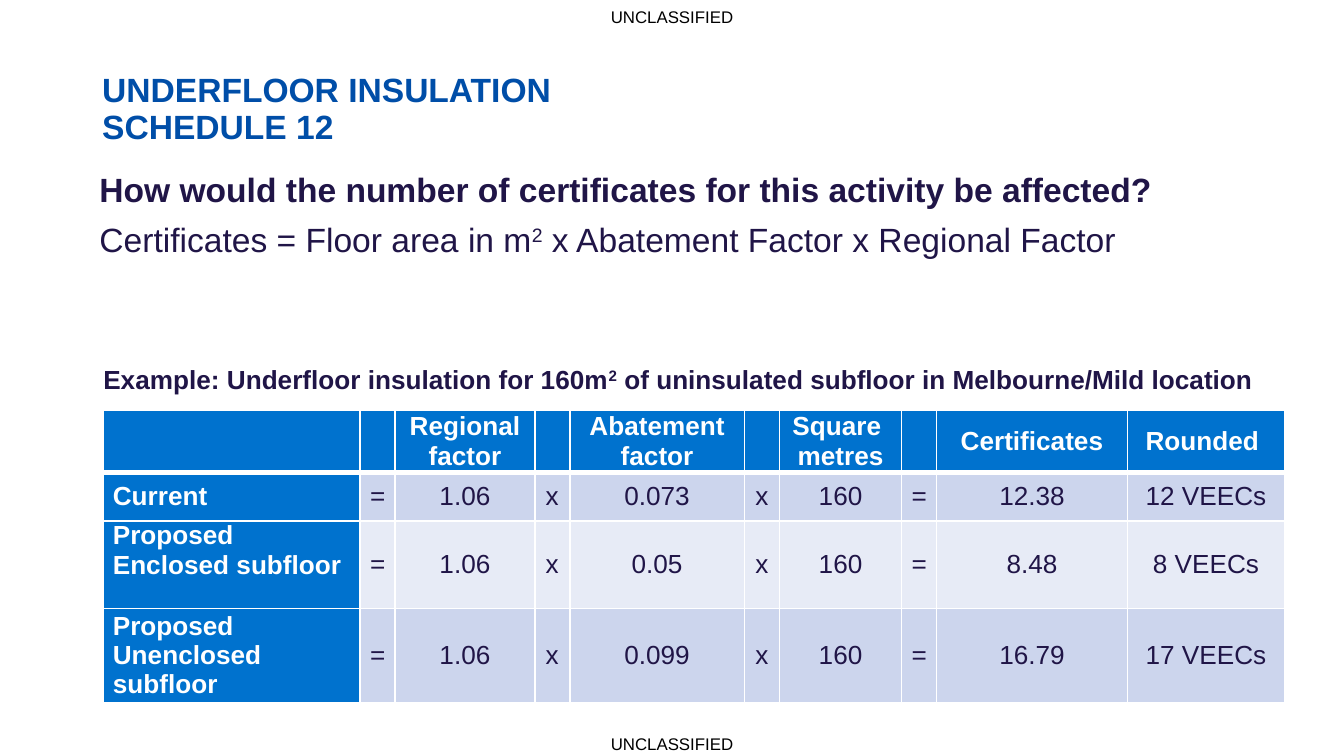
from lxml.etree import SubElement as Sub
from pptx import Presentation
from pptx.dml.color import RGBColor as Rgb
from pptx.enum.text import MSO_ANCHOR as Anchor, MSO_AUTO_SIZE as Auto, PP_ALIGN as Align
from pptx.oxml.ns import qn
from pptx.util import Inches, Pt

NAVY, BLUE, WHITE = "201547", "0072CE", "FFFFFF"
BANDS = ["CCD5ED", "E7EBF6"]


def color(code):
    return Rgb.from_string(code)


def write(frame, text, size=14, ink=NAVY, bold=False, align=Align.LEFT, line=None, first=True):
    para = frame.paragraphs[0] if first else frame.add_paragraph()
    para.alignment = align
    if line:
        para.line_spacing = line
    for row, part in enumerate(text.split("\n")):
        if row:
            para.add_line_break()
        for turn, piece in enumerate(part.split("^")):
            run = para.add_run()
            run.text = piece
            font = run.font
            font.name, font.size, font.bold = "Arial", Pt(size), bold
            font.color.rgb = color(ink)
            if turn % 2:
                font._element.set("baseline", "30000")
    return para


class Deck:
    """Holds the slide and draws its text boxes and table."""

    def __init__(self):
        self.file = Presentation()
        self.file.slide_width, self.file.slide_height = Inches(10), Inches(10 * 9 / 16)
        self.slide = self.file.slides.add_slide(self.file.slide_layouts[6])

    def box(self, left, top, width, height, anchor=Anchor.TOP, inset=(0.1, 0.05), grow=False):
        shape = self.slide.shapes.add_textbox(*map(Inches, (left, top, width, height)))
        frame = shape.text_frame
        frame.word_wrap = True
        frame.vertical_anchor = anchor
        frame.auto_size = Auto.SHAPE_TO_FIT_TEXT if grow else Auto.NONE
        frame.margin_left = frame.margin_right = Inches(inset[0])
        frame.margin_top = frame.margin_bottom = Inches(inset[1])
        return frame

    def cell(self, cell, text, fill, ink, bold, align, base=1):
        cell.vertical_anchor = Anchor.MIDDLE
        cell.margin_left = cell.margin_right = Inches(0.07)
        cell.margin_top = cell.margin_bottom = 0
        cell.fill.solid()
        cell.fill.fore_color.rgb = color(fill)
        props = cell._tc.get_or_add_tcPr()
        for spot, side in enumerate("LRTB"):
            width = base if side == "B" else 1
            edge = Sub(props, qn(f"a:ln{side}"), w=str(Pt(width)))
            Sub(Sub(edge, qn("a:solidFill")), qn("a:srgbClr"), val=WHITE)
            props.insert(spot, edge)
        if text:
            for spot, part in enumerate(text.split("|")):
                write(cell.text_frame, part, ink=ink, bold=bold, align=align, first=not spot)
        else:
            cell.text_frame.paragraphs[0].font.size = Pt(14)

    def table(self, left, top, cols, rows, data):
        place = map(Inches, (left, top, sum(cols), sum(rows)))
        table = self.slide.shapes.add_table(len(rows), len(cols), *place).table
        for col, width in zip(table.columns, cols):
            col.width = Inches(width)
        for row, height in zip(table.rows, rows):
            row.height = Inches(height)
        for r, texts in enumerate(data):
            for c, text in enumerate(texts):
                head = r == 0 or c == 0
                fill = BLUE if head else BANDS[(r - 1) % 2]
                align = Align.LEFT if c == 0 else Align.CENTER
                self.cell(table.cell(r, c), text, fill, WHITE if head else NAVY,
                          head, align, 1 if r else 3)
        return table


def main():
    deck = Deck()
    for top in (0, 5.41):
        mark = deck.box(0, top, 10, 0.25, grow=True)
        write(mark, "UNCLASSIFIED", size=9, ink="000000", align=Align.CENTER)

    title = deck.box(0.69, 0.3, 8.62, 0.83, Anchor.BOTTOM, (0.07, 0.04))
    write(title, "UNDERFLOOR INSULATION\nSCHEDULE 12", size=18, ink="004EA8", bold=True, line=0.9)

    body = deck.box(0.67, 1.25, 8.62, 4.59, inset=(0.07, 0.04))
    write(body, "How would the number of certificates for this activity be affected?",
          size=18, bold=True, line=0.9)
    rule = write(body, "Certificates = Floor area in m^2^ x Abatement Factor x Regional Factor",
                 size=18, line=0.9, first=False)
    rule.space_before = Pt(7.5)

    heads = ["", "", "Regional factor", "", "Abatement factor", "", "Square \nmetres", "",
             "Certificates", "Rounded "]
    cases = [("Current", "0.073", "12.38", "12 VEECs"),
             ("Proposed|Enclosed subfloor", "0.05", "8.48", "8 VEECs"),
             ("Proposed|Unenclosed subfloor", "0.099", "16.79", "17 VEECs")]
    data = [heads] + [[name, "=", "1.06", "x", rate, "x", "160", "=", certs, whole]
                      for name, rate, certs, whole in cases]
    cols = [1.91, 0.26, 1.04, 0.26, 1.3, 0.26, 0.91, 0.26, 1.42, 1.17]
    table = deck.table(0.77, 3.05, cols, [0.4, 0.36, 0.65, 0.56], data)
    table.cell(2, 0).vertical_anchor = Anchor.TOP

    note = deck.box(0.67, 2.65, 10.98, 0.34, Anchor.MIDDLE, grow=True)
    write(note, "Example: Underfloor insulation for 160m^2^ of uninsulated subfloor"
          " in Melbourne/Mild location", bold=True)
    deck.file.save("out.pptx")


if __name__ == "__main__":
    main()
